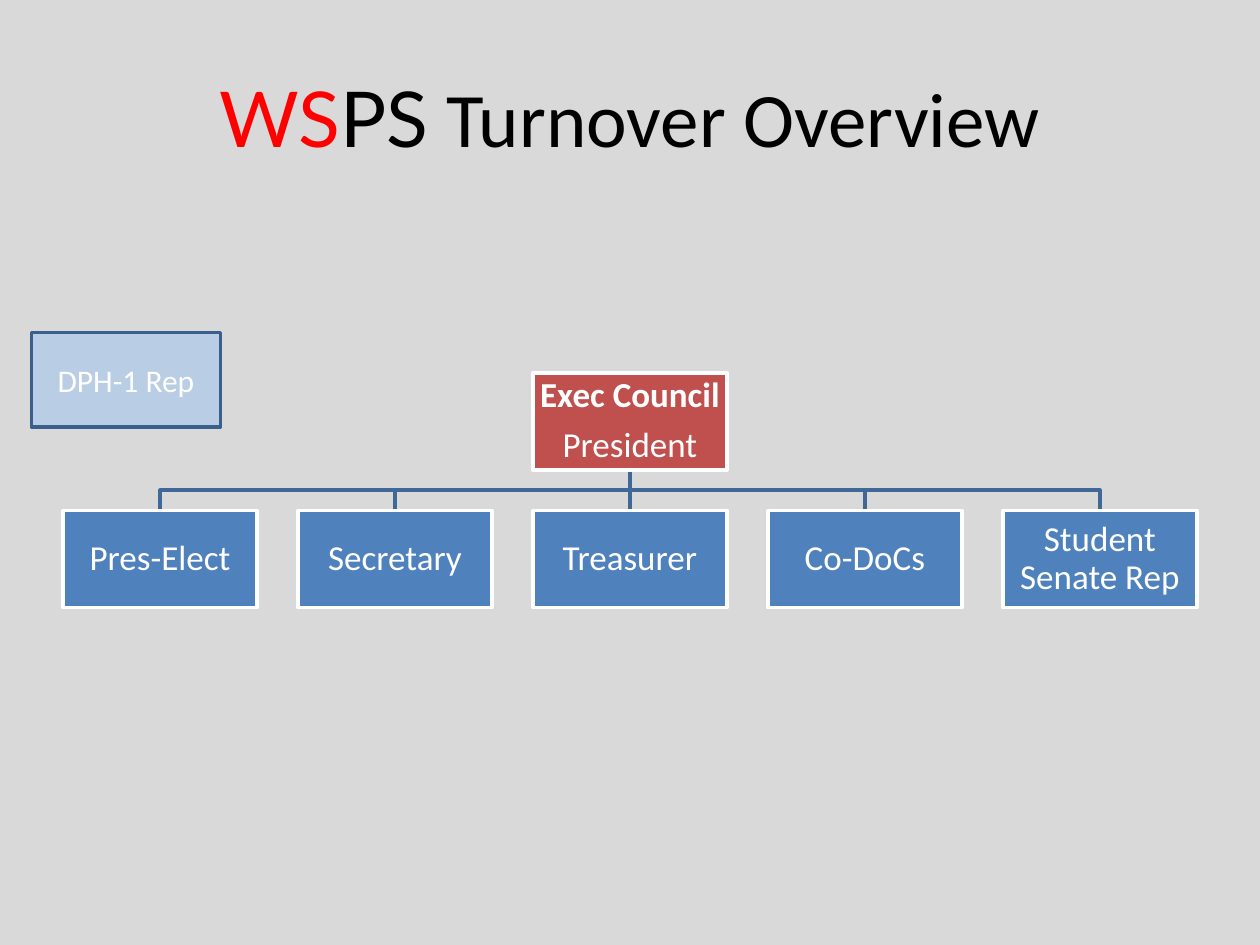
import lxml.etree
import pptx
import pptx.dml.color
import pptx.enum.shapes
import pptx.enum.text
import pptx.oxml.ns
import pptx.util
from dataclasses import dataclass

Pt = pptx.util.Pt
CENTER = pptx.enum.text.PP_ALIGN.CENTER
MIDDLE = pptx.enum.text.MSO_ANCHOR.MIDDLE


@dataclass(frozen=True)
class Theme:
    background: str = "D9D9D9"
    accent: str = "FF0000"
    dark: str = "000000"
    light: str = "FFFFFF"
    lead: str = "C0504D"
    officer: str = "4F81BD"
    rep: str = "B9CDE5"
    rep_line: str = "3A5F8C"
    branch: str = "3F6797"
    body_font: str = "Calibri"
    title_font: str = "Lato"
    title_size: int = 44
    chart_size: int = 20
    rep_size: int = 18
    line_width: int = 2


THEME = Theme()


def rgb(value):
    return pptx.dml.color.RGBColor.from_string(value)


def apply(target, values):
    for name, value in values.items():
        setattr(target, name, value)


def add_run(p, text, size, color, font=THEME.body_font, bold=False):
    r = p.add_run()
    r.text = text
    apply(r.font, {"name": font, "size": Pt(size), "bold": bold})
    r.font.color.rgb = rgb(color)


def set_line(sp, color):
    sp.line.color.rgb = rgb(color)
    sp.line.width = Pt(THEME.line_width)


def add_box(shapes, box, lines, fill, line, size, frame=None, para=None):
    """Filled rectangle; lines holds (text, bold) for each paragraph."""
    sp = shapes.add_shape(pptx.enum.shapes.MSO_SHAPE.RECTANGLE, *map(Pt, box))
    sp.shadow.inherit = False
    sp.fill.solid()
    sp.fill.fore_color.rgb = rgb(fill)
    set_line(sp, line)
    tf = sp.text_frame
    apply(tf, {"word_wrap": True, "vertical_anchor": MIDDLE, **(frame or {})})
    for i, (text, bold) in enumerate(lines):
        p = tf.add_paragraph() if i else tf.paragraphs[0]
        apply(p, {"alignment": CENTER, **(para or {})})
        add_run(p, text, size, THEME.light, bold=bold)


def add_branch(shapes, x1, y1, x2, y2):
    """Elbow from the lead box down to an officer; straight when aligned."""
    if abs(x1 - x2) < 1:
        straight = pptx.enum.shapes.MSO_CONNECTOR.STRAIGHT
        sp = shapes.add_connector(straight, Pt(x1), Pt(y1), Pt(x1), Pt(y2))
        lxml.etree.SubElement(sp._element.spPr, pptx.oxml.ns.qn("a:effectLst"))
    else:
        mid = (y1 + y2) / 2
        builder = shapes.build_freeform(Pt(x1), Pt(y1))
        points = [(x1, mid), (x2, mid), (x2, y2)]
        builder.add_line_segments([(Pt(x), Pt(y)) for x, y in points], close=False)
        sp = builder.convert_to_shape()
        sp.shadow.inherit = False
        sp.fill.background()
    set_line(sp, THEME.branch)


def add_title(slide, box):
    title = slide.shapes.title
    apply(title, dict(zip(("left", "top", "width", "height"), map(Pt, box))))
    title.text_frame.vertical_anchor = MIDDLE
    p = title.text_frame.paragraphs[0]
    p.alignment = CENTER
    for text, color, font in (
        ("WS", THEME.accent, THEME.title_font),
        ("PS", THEME.dark, THEME.title_font),
        (" Turnover Overview", THEME.dark, THEME.body_font),
    ):
        add_run(p, text, THEME.title_size, color, font)


def add_org_chart(slide, box, lead, officers):
    """Lead box centred above one row of officers; gaps are 21% of a box."""
    left, top, width, height = box
    n = len(officers)
    w = width / (n + 0.21 * (n - 1))
    gap = 0.21 * w
    h = (height - gap) / 2
    cx, row = left + width / 2, top + h + gap
    lefts = [left + i * (w + gap) for i in range(n)]
    shapes = slide.shapes.add_group_shape().shapes
    margins = ("margin_left", "margin_top", "margin_right", "margin_bottom")
    style = {
        "line": THEME.light,
        "size": THEME.chart_size,
        "frame": dict.fromkeys(margins, Pt(0.9)),
        "para": {"line_spacing": 0.9, "space_after": Pt(7)},
    }

    # Branches lie behind the boxes
    for x in reversed(lefts):
        add_branch(shapes, cx, top + h, x + w / 2, row)
    add_box(shapes, (cx - w / 2, top, w, h), lead, THEME.lead, **style)
    for x, name in zip(lefts, officers):
        add_box(shapes, (x, row, w, h), [(name, False)], THEME.officer, **style)


def main():
    prs = pptx.Presentation()
    prs.slide_width, prs.slide_height = Pt(720), Pt(540)
    slide = prs.slides.add_slide(prs.slide_layouts[5])
    slide.background.fill.solid()
    slide.background.fill.fore_color.rgb = rgb(THEME.background)

    add_title(slide, (36, 21.6, 648, 90))
    add_org_chart(
        slide,
        (36, 213, 648, 134.25),
        [("Exec Council", True), ("President", False)],
        ["Pres-Elect", "Secretary", "Treasurer", "Co-DoCs", "Student Senate Rep"],
    )
    # Separate representative box
    add_box(slide.shapes, (18, 190, 108, 54), [("DPH-1 Rep", False)],
            THEME.rep, THEME.rep_line, THEME.rep_size)
    prs.save("out.pptx")


if __name__ == "__main__":
    main()
